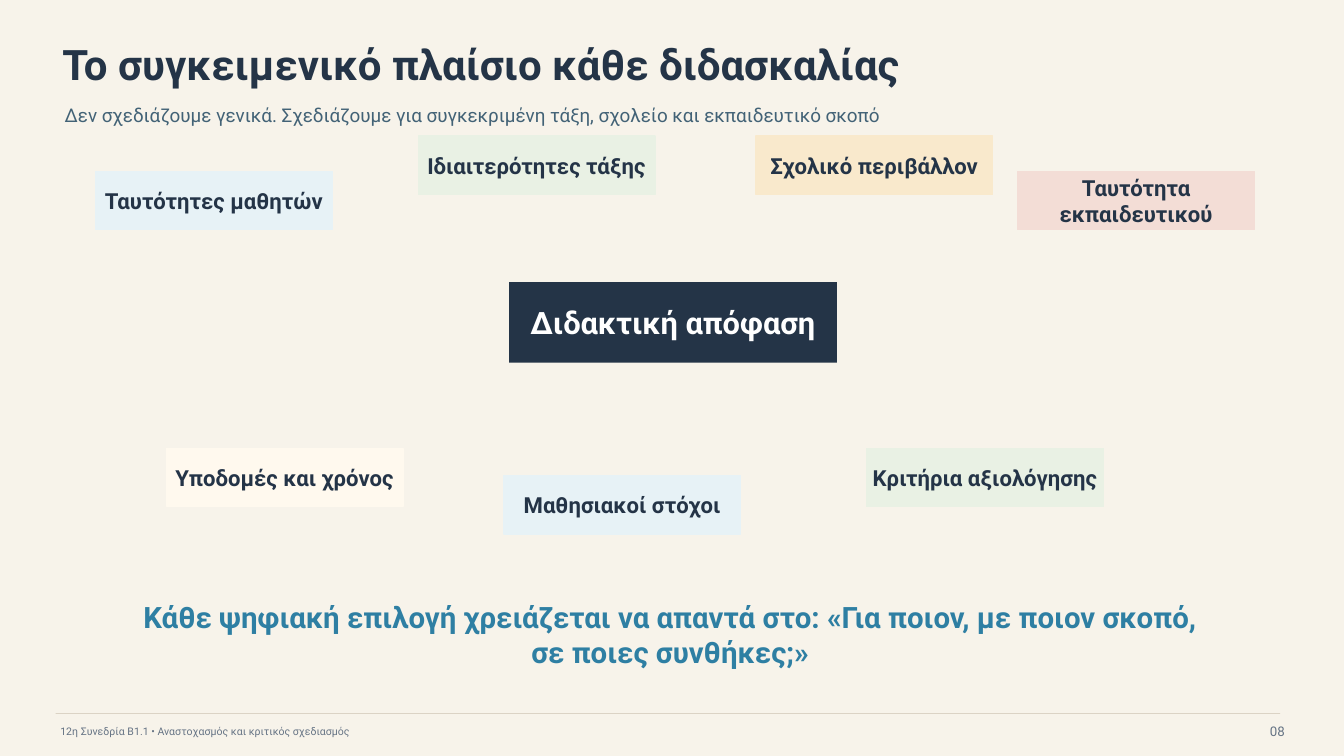
from dataclasses import dataclass

from lxml import etree
from pptx import Presentation
from pptx.dml.color import RGBColor
from pptx.enum import shapes, text
from pptx.oxml import ns
from pptx.util import Cm, Pt

FONT = "Roboto"
CREAM = RGBColor(0xF7, 0xF3, 0xEA)
NAVY = RGBColor(0x24, 0x34, 0x47)
SLATE = RGBColor(0x42, 0x62, 0x76)
GREY = RGBColor(0x65, 0x73, 0x84)
BLUE = RGBColor(0x2E, 0x7F, 0xA3)
WHITE = RGBColor(0xFF, 0xFF, 0xFF)
RULE = RGBColor(0xD8, 0xD0, 0xC1)
PALE_BLUE = RGBColor(0xE7, 0xF2, 0xF6)
PALE_GREEN = RGBColor(0xE9, 0xF1, 0xE4)
PALE_AMBER = RGBColor(0xF9, 0xE9, 0xCC)
PALE_ROSE = RGBColor(0xF3, 0xDD, 0xD6)
IVORY = RGBColor(0xFF, 0xF9, 0xEE)

LEFT, CENTER, RIGHT = text.PP_ALIGN.LEFT, text.PP_ALIGN.CENTER, text.PP_ALIGN.RIGHT
FACTOR_WIDTH, FACTOR_HEIGHT = 5.97, 1.47


@dataclass
class Label:
    """A text box, or a filled rectangle when fill is given; lengths in cm."""
    wording: str
    left: float
    top: float
    width: float
    height: float
    size: float
    color: RGBColor
    bold: bool = False
    align: text.PP_ALIGN = LEFT
    fill: RGBColor | None = None
    outlined: bool = False


@dataclass
class Factor:
    """A factor that shapes the teaching decision; position in cm."""
    wording: str
    left: float
    top: float
    fill: RGBColor

    def label(self) -> Label:
        return Label(self.wording, self.left, self.top, FACTOR_WIDTH, FACTOR_HEIGHT,
                     15.8, NAVY, True, CENTER, self.fill, True)


TITLE = Label("Το συγκειμενικό πλαίσιο κάθε διδασκαλίας", 1.57, 0.91, 25.15, 1.4, 30, NAVY, True)
SUBTITLE = Label(
    "Δεν σχεδιάζουμε γενικά. Σχεδιάζουμε για συγκεκριμένη τάξη, σχολείο και εκπαιδευτικό σκοπό",
    1.63, 2.44, 25.91, 0.91, 13.5, SLATE)
FOOTER = Label("12η Συνεδρία Β1.1 • Αναστοχασμός και κριτικός σχεδιασμός",
               1.52, 18.21, 22.1, 0.46, 7.5, GREY)
PAGE_NUMBER = Label("08", 30.86, 18.06, 1.52, 0.71, 9.5, GREY, align=RIGHT)
DECISION = Label("Διδακτική απόφαση", 12.83, 7.11, 8.26, 2.03, 22, WHITE, True, CENTER, NAVY)
MESSAGE = Label(
    "Κάθε ψηφιακή επιλογή χρειάζεται να απαντά στο: «Για ποιον, με ποιον σκοπό, σε ποιες συνθήκες;»",
    3.43, 15.29, 26.92, 1.4, 21, BLUE, True, CENTER)

FACTORS = [
    Factor("Ταυτότητες μαθητών", 2.41, 4.32, PALE_BLUE),
    Factor("Ιδιαιτερότητες τάξης", 10.54, 3.43, PALE_GREEN),
    Factor("Σχολικό περιβάλλον", 19.05, 3.43, PALE_AMBER),
    Factor("Ταυτότητα εκπαιδευτικού", 25.65, 4.32, PALE_ROSE),
    Factor("Υποδομές και χρόνος", 4.19, 11.3, IVORY),
    Factor("Μαθησιακοί στόχοι", 12.7, 11.99, PALE_BLUE),
    Factor("Κριτήρια αξιολόγησης", 21.84, 11.3, PALE_GREEN),
]


def draw_label(slide, label: Label) -> None:
    box = Cm(label.left), Cm(label.top), Cm(label.width), Cm(label.height)
    if label.fill is None:
        shape = slide.shapes.add_textbox(*box)
    else:
        shape = slide.shapes.add_shape(shapes.MSO_SHAPE.RECTANGLE, *box)
        shape.shadow.inherit = False
        shape.fill.solid()
        shape.fill.fore_color.rgb = label.fill
        if label.outlined:
            shape.line.color.rgb = label.fill
            shape.line.width = Pt(1)
        else:
            shape.line.fill.background()

    frame = shape.text_frame
    frame.word_wrap = True
    frame.vertical_anchor = text.MSO_ANCHOR.MIDDLE
    frame.margin_left = frame.margin_right = frame.margin_top = frame.margin_bottom = 0
    paragraph = frame.paragraphs[0]
    paragraph.text = label.wording
    paragraph.alignment = label.align
    paragraph.font.name = FONT
    paragraph.font.size = Pt(label.size)
    paragraph.font.bold = label.bold
    paragraph.font.color.rgb = label.color


def draw_footer_rule(slide) -> None:
    rule = slide.shapes.add_connector(
        shapes.MSO_CONNECTOR.STRAIGHT, Cm(1.4), Cm(17.98), Cm(32.26), Cm(17.98))
    rule.line.color.rgb = RULE
    rule.line.width = Pt(0.5)
    properties = rule._element.spPr
    # Line opacity of 90 %, and no theme shadow
    color = properties.find(".//" + ns.qn("a:srgbClr"))
    etree.SubElement(color, ns.qn("a:alpha")).set("val", "90000")
    etree.SubElement(properties, ns.qn("a:effectLst"))


def main() -> None:
    presentation = Presentation()
    presentation.slide_width = Cm(33.87)
    presentation.slide_height = Cm(19.05)
    slide = presentation.slides.add_slide(presentation.slide_layouts[6])
    slide.background.fill.solid()
    slide.background.fill.fore_color.rgb = CREAM

    # Heading and footer
    draw_label(slide, TITLE)
    draw_label(slide, SUBTITLE)
    draw_footer_rule(slide)
    draw_label(slide, FOOTER)
    draw_label(slide, PAGE_NUMBER)

    # Decision with the factors around it, and the closing message
    draw_label(slide, DECISION)
    for factor in FACTORS:
        draw_label(slide, factor.label())
    draw_label(slide, MESSAGE)

    presentation.save("out.pptx")


if __name__ == "__main__":
    main()
